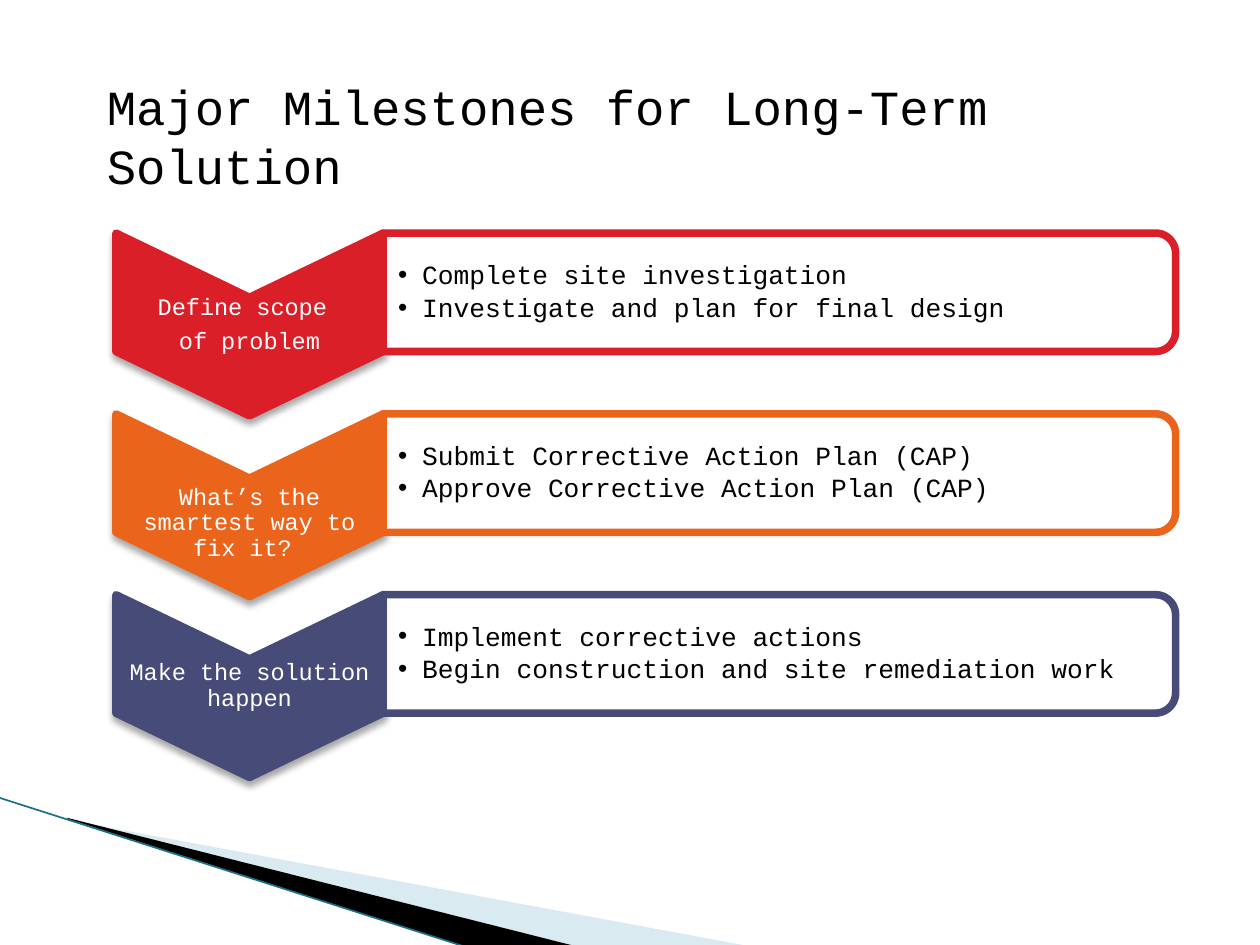
from dataclasses import dataclass
from math import cos, pi, sin

from lxml.etree import SubElement
from pptx import Presentation
from pptx.dml.color import RGBColor
from pptx.enum.shapes import MSO_CONNECTOR
from pptx.enum.text import MSO_ANCHOR, MSO_AUTO_SIZE, PP_ALIGN
from pptx.oxml.ns import qn
from pptx.util import Inches, Pt


@dataclass(frozen=True)
class Theme:
    font: str = "Courier New"
    ink: str = "000000"
    paper: str = "FFFFFF"
    pale: str = "A0CBDC"
    teal: str = "1B7087"
    title_size: float = 28
    label_size: float = 13.5
    bullet_size: float = 15
    outline: float = 4.33


THEME = Theme()

# Grid of the milestone rows
LEFT, TOP, PITCH = 0.92, 1.85, 1.435
CHEVRON_WIDTH, PANEL_WIDTH = 2.12, 6.29
PANEL_HEIGHT, POINT_DEPTH, CORNER = 0.94, 0.51, 0.16

# Colour, label lines, top inset of the label, bullets
MILESTONES = [
    ("DA1F28", ["Define scope ", "of problem"], 0,
     ["Complete site investigation", "Investigate and plan for final design"]),
    ("EB641B", ["What’s the smartest way to fix it? "], 0.28,
     ["Submit Corrective Action Plan (CAP)", "Approve Corrective Action Plan (CAP)"]),
    ("474B78", ["Make the solution happen"], 0,
     ["Implement corrective actions", "Begin construction and site remediation work"]),
]


def add_polygon(page, points, fill, opacity=100, line=None):
    corners = [(Inches(x), Inches(y)) for x, y in points]
    builder = page.shapes.build_freeform(*corners[0])
    builder.add_line_segments(corners[1:], close=True)
    shape = builder.convert_to_shape()
    shape.shadow.inherit = False
    shape.fill.solid()
    shape.fill.fore_color.rgb = RGBColor.from_string(fill)
    if opacity < 100:
        color = shape.fill._xPr.find(qn("a:solidFill"))[0]
        SubElement(color, qn("a:alpha"), val=str(opacity * 1000))
    if line:
        shape.line.color.rgb = RGBColor.from_string(line)
        shape.line.width = Pt(THEME.outline)
        SubElement(shape.line._get_or_add_ln(), qn("a:round"))
    else:
        shape.line.fill.background()
    return shape


def add_soft_shadow(shape):
    effects = shape._element.spPr.find(qn("a:effectLst"))
    shadow = SubElement(effects, qn("a:outerShdw"), blurRad=str(Pt(4)),
                        dist=str(Pt(3)), dir="5400000", rotWithShape="0")
    color = SubElement(shadow, qn("a:srgbClr"), val=THEME.ink)
    SubElement(color, qn("a:alpha"), val="35000")


def set_frame(shape, left, top, right, bottom):
    frame = shape.text_frame
    frame.word_wrap = True
    frame.vertical_anchor = MSO_ANCHOR.MIDDLE
    frame.margin_left, frame.margin_top = Inches(left), Inches(top)
    frame.margin_right, frame.margin_bottom = Inches(right), Inches(bottom)
    return frame


def add_span(para, text, size, color):
    span = para.add_run()
    span.text = text
    span.font.name = THEME.font
    span.font.size = Pt(size)
    span.font.color.rgb = RGBColor.from_string(color)


def add_paragraphs(frame, lines, size, color, align, gap, bullet=False):
    for index, text in enumerate(lines):
        para = frame.add_paragraph() if index else frame.paragraphs[0]
        para.alignment = align
        para.line_spacing = 0.9
        para.space_after = Pt(gap)
        if bullet:
            properties = para._p.get_or_add_pPr()
            properties.set("marL", str(Inches(0.19)))
            properties.set("indent", str(-Inches(0.19)))
            SubElement(properties, qn("a:buFont"), typeface="Arial")
            SubElement(properties, qn("a:buChar"), char="•")
        add_span(para, text, size, color)


def add_chevron(page, top, color, lines, inset):
    middle, right = LEFT + CHEVRON_WIDTH / 2, LEFT + CHEVRON_WIDTH
    bottom = top + PANEL_HEIGHT
    shape = add_polygon(page, [
        (right, top), (right, bottom), (middle, bottom + POINT_DEPTH),
        (LEFT, bottom), (LEFT, top), (middle, top + POINT_DEPTH)], color, line=color)
    add_soft_shadow(shape)
    frame = set_frame(shape, 0.01, inset, 0.01, 0)
    add_paragraphs(frame, lines, THEME.label_size, THEME.paper, PP_ALIGN.CENTER, 5)


def add_panel(page, top, color, bullets):
    left = LEFT + CHEVRON_WIDTH
    right, bottom = left + PANEL_WIDTH, top + PANEL_HEIGHT
    angles = [step * pi / 24 for step in range(13)]
    center = right - CORNER
    upper = [(center + CORNER * sin(a), top + CORNER * (1 - cos(a))) for a in angles]
    lower = [(x, top + bottom - y) for x, y in reversed(upper)]
    shape = add_polygon(page, [(left, top), *upper, *lower, (left, bottom)],
                        THEME.paper, 90, color)
    frame = set_frame(shape, 0.12, 0.05, 0.05, 0.05)
    add_paragraphs(frame, bullets, THEME.bullet_size, THEME.ink, PP_ALIGN.LEFT, 2.5, True)


def add_swoosh(page):
    add_polygon(page, [(0.55, 6.51), (5.95, 7.51), (4.56, 7.51), (0.55, 6.5)],
                THEME.pale, 40)
    add_polygon(page, [(0.53, 6.49), (4.57, 7.51), (3.72, 7.52), (0.54, 6.5)], THEME.ink)
    edge = page.shapes.add_connector(MSO_CONNECTOR.STRAIGHT, Inches(-0.01), Inches(6.33),
                                     Inches(3.71), Inches(7.52))
    edge.line.color.rgb = RGBColor.from_string(THEME.teal)
    edge.line.width = Pt(0.95)
    SubElement(edge._element.spPr, qn("a:effectLst"))


def add_title(page, text):
    box = page.shapes.add_textbox(Inches(0.75), Inches(0.56), Inches(8.17), Inches(0.57))
    box.text_frame.word_wrap = True
    box.text_frame.auto_size = MSO_AUTO_SIZE.SHAPE_TO_FIT_TEXT
    add_span(box.text_frame.paragraphs[0], text, THEME.title_size, THEME.ink)


def main():
    deck = Presentation()
    deck.slide_width, deck.slide_height = Inches(10), Inches(7.5)
    page = deck.slides.add_slide(deck.slide_layouts[6])

    # Corner decoration
    add_swoosh(page)

    # Milestone rows
    for row, (color, label, inset, bullets) in enumerate(MILESTONES):
        top = TOP + row * PITCH
        add_chevron(page, top, color, label, inset)
        add_panel(page, top, color, bullets)

    # Title
    add_title(page, "Major Milestones for Long-Term Solution")
    deck.save("out.pptx")


if __name__ == "__main__":
    main()
